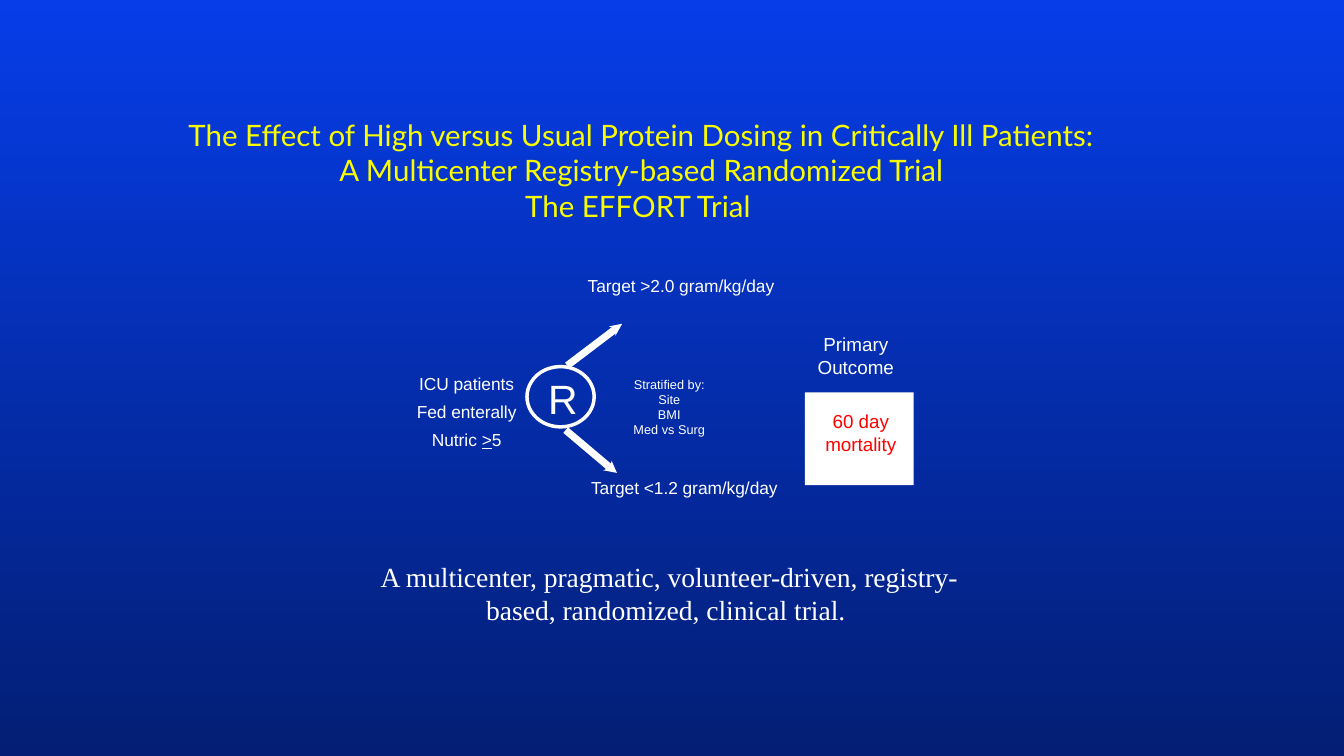
from pptx import Presentation
from pptx import util as u
from pptx.dml.color import RGBColor
from pptx.enum import shapes, text
from pptx.oxml import parse_xml
from pptx.oxml.ns import nsdecls

THEME = {
    "white": "FFFFFF", "yellow": "FAFD00", "red": "FF0000",
    "bg": ("063DE8", "031E74"),
    "sans": "Arial", "heading": "Lato", "serif": "Times New Roman",
    "title": 15.8, "body": 14.8, "letter": 21.9,
    "outcome": 10.1, "label": 9.3, "strata": 6.8,
    "ring": 1.88, "arrow": 3.88,
}

TITLE = ["The Effect of High versus Usual Protein Dosing in Critically Ill Patients:",
         "A Multicenter Registry-based Randomized Trial",
         "The EFFORT Trial "]
TITLE_BOX = (2.72, 2.54, 18.82, 1.35)

CRITERIA = ["ICU patients", "Fed enterally", "Nutric _>_5"]
CRITERIA_BOX, CRITERIA_PITCH = (7.87, 7.06, 1.9, 0.41), 0.53

TARGETS = [("Target >2.0 gram/kg/day", (10.9, 5.21, 3.94, 0.41)),
           ("Target <1.2 gram/kg/day", (11.13, 9.02, 3.61, 0.41))]

RING = (9.96, 6.93, 1.27, 1.14)
LETTER_BOX = (10.36, 7.06, 0.56, 0.94)
ARROWS = [((10.72, 6.91, 11.63, 6.22),
           [(11.51, 6.17), (11.76, 6.12), (11.63, 6.35), (11.63, 6.22)]),
          ((10.69, 8.13, 11.53, 8.84),
           [(11.56, 8.71), (11.66, 8.94), (11.4, 8.89), (11.53, 8.84)])]

STRATA = ["Stratified by:", "Site", "BMI", "Med vs Surg"]
STRATA_BOX = (11.53, 6.99, 2.24, 1.42)

OUTCOME_BOX = (15.11, 6.17, 2.13, 1.12)
OUTCOME_PANEL = (15.21, 7.42, 2.06, 1.75)
RESULT = ["60 day", "mortality"]
RESULT_BOX = (15.14, 7.62, 2.26, 1.12)

SUMMARY = ("A multicenter, pragmatic, volunteer-driven, registry-based, "
           "randomized, clinical trial. ")
SUMMARY_BOX = (6.4, 10.46, 12.5, 1.52)


def cm(values):
    return [u.Cm(v) for v in values]


def rgb(name):
    return RGBColor.from_string(THEME[name])


def write(s, lines, box, size="label", font="sans", color="white",
          inset=True, wrap=True, before=0, sp=None):
    if sp is None:
        sp = s.shapes.add_textbox(*cm(box))
    else:
        sp.left, sp.top, sp.width, sp.height = cm(box)
    tf = sp.text_frame
    tf.word_wrap = wrap
    tf.auto_size = text.MSO_AUTO_SIZE.NONE
    if not inset:
        tf.margin_left = tf.margin_right = tf.margin_top = tf.margin_bottom = 0
    for i, line in enumerate(lines):
        p = tf.add_paragraph() if i else tf.paragraphs[0]
        p.alignment = text.PP_ALIGN.CENTER
        p.space_before = u.Pt(before)
        for j, part in enumerate(line.split("_")):
            r = p.add_run()
            r.text = part
            r.font.size = u.Pt(THEME[size])
            r.font.name = THEME[font]
            r.font.color.rgb = rgb(color)
            if j % 2:
                r.font.underline = True
    return sp


def fill_white(sp):
    sp.shadow.inherit = False
    sp.fill.solid()
    sp.fill.fore_color.rgb = rgb("white")
    sp.line.fill.background()


def draw_arrow(s, shaft, head):
    line = s.shapes.add_connector(shapes.MSO_CONNECTOR.STRAIGHT, *cm(shaft))
    line.line.color.rgb = rgb("white")
    line.line.width = u.Pt(THEME["arrow"])
    line._element.spPr.append(parse_xml(f"<a:effectLst {nsdecls('a')}/>"))
    points = [cm(pt) for pt in head]
    outline = s.shapes.build_freeform(*points[0])
    outline.add_line_segments(points[1:], close=True)
    fill_white(outline.convert_to_shape())


def main():
    prs = Presentation()
    prs.slide_width, prs.slide_height = cm((25.4, 14.29))
    s = prs.slides.add_slide(prs.slide_layouts[5])
    bg = s.background.fill
    bg.gradient()
    bg.gradient_angle = 270
    for stop, color in zip(bg.gradient_stops, THEME["bg"]):
        stop.color.rgb = RGBColor.from_string(color)

    title = write(s, TITLE, TITLE_BOX, size="title", font="heading",
                  color="yellow", sp=s.shapes.title)
    title.text_frame.vertical_anchor = text.MSO_ANCHOR.MIDDLE

    left, top, width, height = CRITERIA_BOX
    for i, line in enumerate(CRITERIA):
        write(s, [line], (left, top + i * CRITERIA_PITCH, width, height),
              inset=False, wrap=False)
    for line, box in TARGETS:
        write(s, [line], box, inset=False, wrap=False)

    ring = s.shapes.add_shape(shapes.MSO_SHAPE.OVAL, *cm(RING))
    ring.shadow.inherit = False
    ring.fill.background()
    ring.line.color.rgb = rgb("white")
    ring.line.width = u.Pt(THEME["ring"])
    write(s, ["R"], LETTER_BOX, size="letter", inset=False, wrap=False)
    for shaft, head in ARROWS:
        draw_arrow(s, shaft, head)

    write(s, STRATA, STRATA_BOX, size="strata")
    write(s, ["Primary Outcome"], OUTCOME_BOX, size="outcome")
    fill_white(s.shapes.add_shape(shapes.MSO_SHAPE.RECTANGLE, *cm(OUTCOME_PANEL)))
    write(s, RESULT, RESULT_BOX, size="outcome", color="red")
    write(s, [SUMMARY], SUMMARY_BOX, size="body", font="serif", before=3)
    prs.save("out.pptx")


if __name__ == "__main__":
    main()
